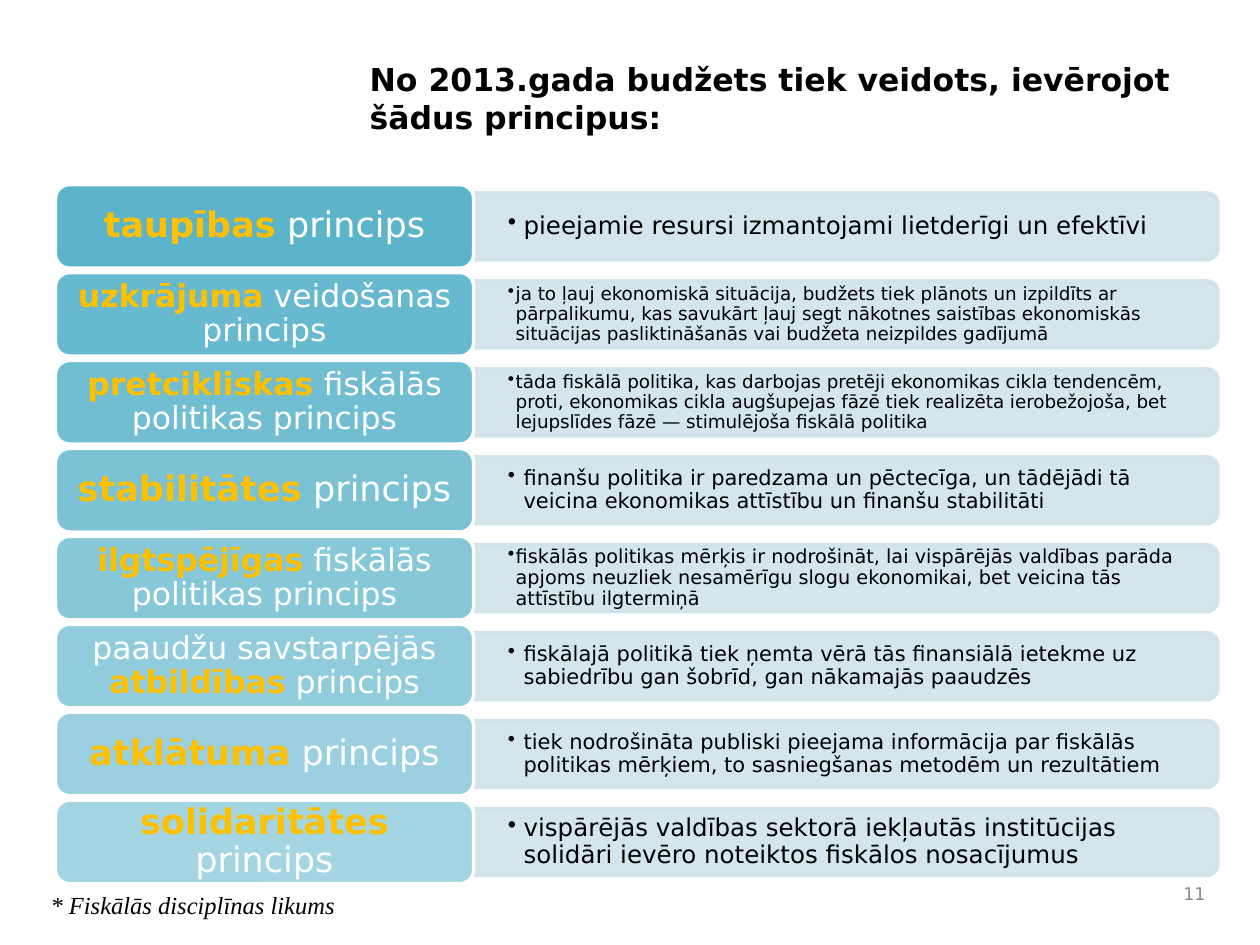
from lxml.etree import SubElement
from pptx import Presentation
from pptx.dml.color import RGBColor
from pptx.enum.shapes import MSO_SHAPE
from pptx.enum.text import MSO_ANCHOR, PP_ALIGN
from pptx.oxml.ns import qn
from pptx.util import Pt

SANS, SERIF = "DejaVu Sans", "Times New Roman"
BLACK, WHITE, GREY = "000000", "FFFFFF", "898989"
TEAL, PALE, GOLD = "4BACC6", "D0E3EA", "FFC000"

HEADING = "No 2013.gada budžets tiek veidots, ievērojot šādus principus:"
FOOTNOTE = "* Fiskālās disciplīnas likums"
PAGE_NUMBER = "11"

# (before, highlighted, after), label size, explanation, explanation size
PRINCIPLES = [
    (("", "taupības", " princips"), 20,
     "pieejamie resursi izmantojami lietderīgi un efektīvi", 14),
    (("", "uzkrājuma", " veidošanas princips"), 18,
     "ja to ļauj ekonomiskā situācija, budžets tiek plānots un izpildīts ar "
     "pārpalikumu, kas savukārt ļauj segt nākotnes saistības ekonomiskās "
     "situācijas pasliktināšanās vai budžeta neizpildes gadījumā", 10.5),
    (("", "pretcikliskas", " fiskālās politikas princips"), 18,
     "tāda fiskālā politika, kas darbojas pretēji ekonomikas cikla tendencēm, "
     "proti, ekonomikas cikla augšupejas fāzē tiek realizēta ierobežojoša, bet "
     "lejupslīdes fāzē — stimulējoša fiskālā politika", 10.5),
    (("", "stabilitātes", " princips"), 20,
     "finanšu politika ir paredzama un pēctecīga, un tādējādi tā veicina "
     "ekonomikas attīstību un finanšu stabilitāti", 12),
    (("", "ilgtspējīgas", " fiskālās politikas princips"), 18,
     "fiskālās politikas mērķis ir nodrošināt, lai vispārējās valdības parāda "
     "apjoms neuzliek nesamērīgu slogu ekonomikai, bet veicina tās attīstību "
     "ilgtermiņā", 11),
    (("paaudžu savstarpējās ", "atbildības", " princips"), 18,
     "fiskālajā politikā tiek ņemta vērā tās finansiālā ietekme uz sabiedrību "
     "gan šobrīd, gan nākamajās paaudzēs", 12),
    (("", "atklātuma", " princips"), 20,
     "tiek nodrošināta publiski pieejama informācija par fiskālās politikas "
     "mērķiem, to sasniegšanas metodēm un rezultātiem", 12),
    (("", "solidaritātes", " princips"), 20,
     "vispārējās valdības sektorā iekļautās institūcijas solidāri ievēro "
     "noteiktos fiskālos nosacījumus", 14),
]

FIRST_CENTER, PITCH = 129.4, 50.25
LABEL_LEFT, LABEL_WIDTH, LABEL_HEIGHT = 31.7, 239, 47.8
BAR_LEFT, BAR_LENGTH, BAR_HEIGHT = 271, 425, 38.2
TEXT_WIDTH, TEXT_HEIGHT = 423, 34.6
OPACITY_FROM, OPACITY_TO = 90, 50


def paint(color_format, color):
    color_format.rgb = RGBColor.from_string(color)


def set_opacity(fill_parent, percent):
    color = fill_parent.find(qn("a:solidFill"))[0]
    SubElement(color, qn("a:alpha"), val=str(round(percent * 1000)))


def style(paragraph, size, color, face=SANS, bold=None, italic=None):
    font = paragraph.font
    font.name, font.size, font.bold, font.italic = face, Pt(size), bold, italic
    paint(font.color, color)


def set_frame(frame, side, edge, anchor=MSO_ANCHOR.MIDDLE):
    frame.word_wrap = True
    frame.vertical_anchor = anchor
    frame.margin_left = frame.margin_right = Pt(side)
    frame.margin_top = frame.margin_bottom = Pt(edge)
    return frame.paragraphs[0]


def add_panel(slide, kind, box, fill, opacity, line):
    panel = slide.shapes.add_shape(kind, *map(Pt, box))
    panel.shadow.inherit = False
    panel.fill.solid()
    paint(panel.fill.fore_color, fill)
    set_opacity(panel.element.spPr, opacity)
    paint(panel.line.color, line)
    panel.line.width = Pt(2)
    return panel


def add_text(slide, box, side=7.2, edge=3.6, anchor=MSO_ANCHOR.MIDDLE):
    return set_frame(slide.shapes.add_textbox(*map(Pt, box)).text_frame,
                     side, edge, anchor)


def add_bar(slide, center, explanation, size):
    box = (BAR_LEFT + (BAR_LENGTH - BAR_HEIGHT) / 2, center - BAR_LENGTH / 2,
           BAR_HEIGHT, BAR_LENGTH)
    bar = add_panel(slide, MSO_SHAPE.ROUND_2_SAME_RECTANGLE, box, PALE, 90, PALE)
    set_opacity(bar.line._get_or_add_ln(), 90)
    bar.rotation = 90

    bullet = add_text(slide, (BAR_LEFT, center - TEXT_HEIGHT / 2,
                              TEXT_WIDTH, TEXT_HEIGHT), 19.2, 0)
    bullet.text = explanation
    bullet.line_spacing = 0.9
    indent = Pt(9 if size >= 12 else 4.5)
    properties = bullet._p.get_or_add_pPr()
    properties.set("marL", str(indent))
    properties.set("indent", str(-indent))
    SubElement(properties, qn("a:buChar"), char="•")
    style(bullet, size, BLACK)


def add_label(slide, center, parts, size, opacity):
    box = (LABEL_LEFT, center - LABEL_HEIGHT / 2, LABEL_WIDTH, LABEL_HEIGHT)
    label = add_panel(slide, MSO_SHAPE.ROUNDED_RECTANGLE, box, TEAL, opacity, WHITE)
    caption = set_frame(label.text_frame, size * 0.3, 3)
    caption.alignment = PP_ALIGN.CENTER
    caption.line_spacing = 0.9
    style(caption, size, WHITE)
    before, highlighted, after = parts
    for words in filter(None, parts):
        run = caption.add_run()
        run.text = words
        run.font.bold = words == highlighted
        paint(run.font.color, GOLD if words == highlighted else WHITE)


def main():
    deck = Presentation()
    deck.slide_width, deck.slide_height = Pt(720), Pt(540)
    slide = deck.slides.add_slide(deck.slide_layouts[5])

    title = slide.shapes.title
    title.left, title.top, title.width, title.height = map(Pt, (204, 30, 480, 52))
    heading = set_frame(title.text_frame, 7.2, 3.6)
    heading.text = HEADING
    heading.alignment = PP_ALIGN.LEFT
    style(heading, 18, BLACK, bold=True)

    number = add_text(slide, (663, 498.5, 33, 24))
    number.text = PAGE_NUMBER
    number.alignment = PP_ALIGN.RIGHT
    style(number, 10, GREY)

    opacity_step = (OPACITY_TO - OPACITY_FROM) / (len(PRINCIPLES) - 1)
    for row, (parts, label_size, explanation, size) in enumerate(PRINCIPLES):
        center = FIRST_CENTER + row * PITCH
        add_bar(slide, center, explanation, size)
        add_label(slide, center, parts, label_size, OPACITY_FROM + row * opacity_step)

    footnote = add_text(slide, (21.8, 505, 228, 29), anchor=MSO_ANCHOR.TOP)
    footnote.text = FOOTNOTE
    style(footnote, 14, BLACK, SERIF, italic=True)

    deck.save("out.pptx")


if __name__ == "__main__":
    main()
